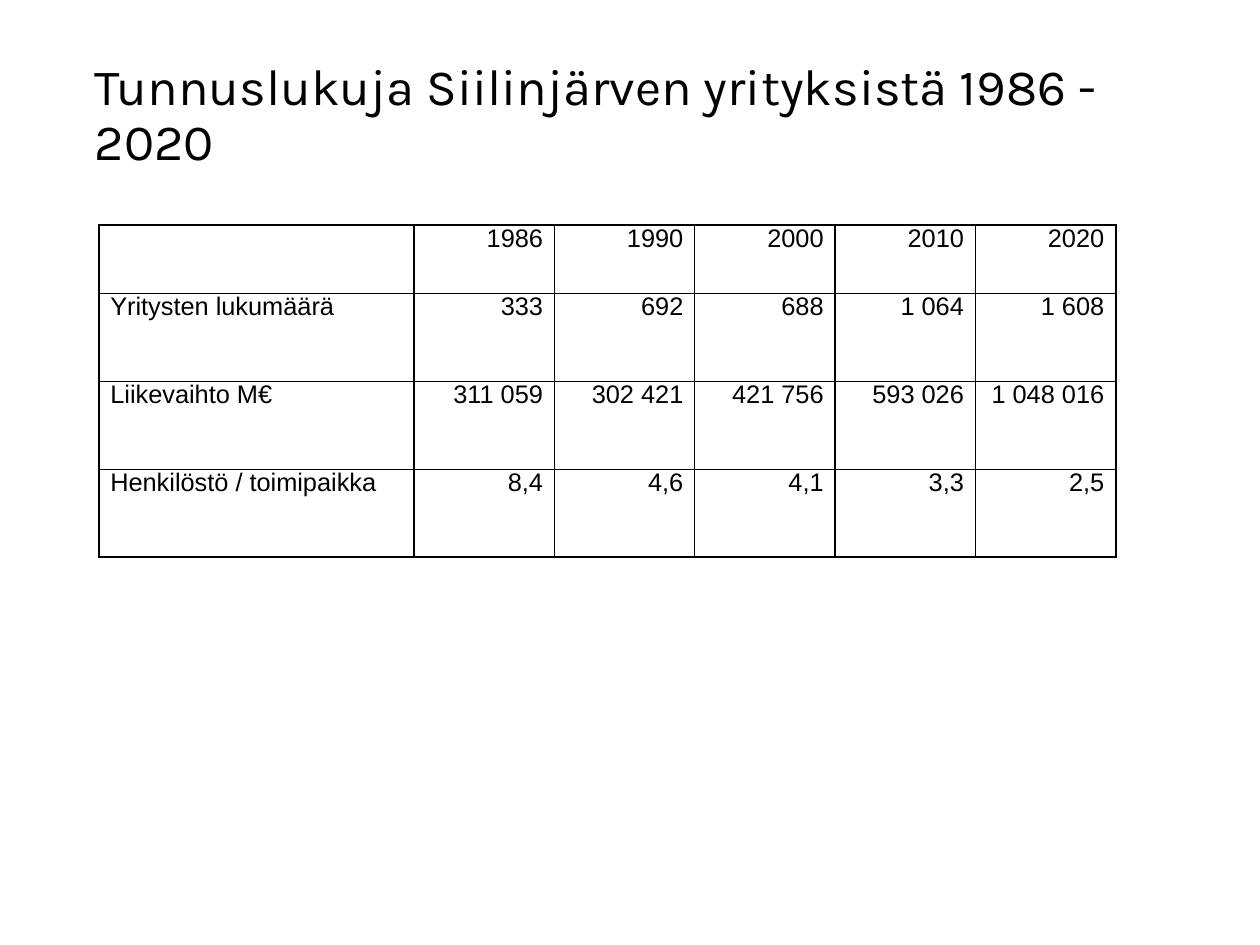
from pptx import Presentation
from pptx.dml.color import RGBColor
from pptx.enum.text import MSO_ANCHOR as Anchor, PP_ALIGN as Align
from pptx.oxml import parse_xml
from pptx.oxml.ns import nsdecls
from pptx.util import Pt

BLACK = RGBColor(0, 0, 0)
THICK, THIN = Pt(1.25), Pt(0.5)
THICK_COLUMN_EDGES = (0, 1, 4, 6)
COLUMN_WIDTHS = [198.6] + [88.4] * 5
ROW_HEIGHTS = [43] + [55.5] * 3
KEY_FIGURES = [
    ("", "1986", "1990", "2000", "2010", "2020"),
    ("Yritysten lukumäärä", "333", "692", "688", "1 064", "1 608"),
    ("Liikevaihto M€", "311 059", "302 421", "421 756", "593 026", "1 048 016"),
    ("Henkilöstö / toimipaikka", "8,4", "4,6", "4,1", "3,3", "2,5"),
]


def style_paragraph(paragraph, font_name, size, line_spacing, align):
    """Set the font, line spacing and alignment of a paragraph."""
    paragraph.font.name = font_name
    paragraph.font.size = Pt(size)
    paragraph.font.bold = False
    paragraph.font.color.rgb = BLACK
    paragraph.line_spacing = line_spacing
    paragraph.alignment = align


def fill_title(title, wording):
    """Place and format the slide title."""
    title.left, title.top, title.width, title.height = Pt(52.6), Pt(24.5), Pt(650.2), Pt(99.4)
    frame = title.text_frame
    frame.text = wording
    frame.word_wrap = True
    frame.vertical_anchor = Anchor.MIDDLE
    frame.margin_left = frame.margin_right = Pt(7.2)
    frame.margin_top, frame.margin_bottom = Pt(2.2), Pt(3.6)
    style_paragraph(frame.paragraphs[0], "Karla", 32, 0.9, Align.LEFT)


def draw_borders(cell, row, column):
    """Give a cell its thick or thin border on each side."""
    edges = {
        "lnL": column in THICK_COLUMN_EDGES,
        "lnR": column + 1 in THICK_COLUMN_EDGES,
        "lnT": row == 0,
        "lnB": row + 1 == len(KEY_FIGURES),
    }
    properties = cell._tc.get_or_add_tcPr()
    for position, (side, is_thick) in enumerate(edges.items()):
        border = parse_xml(
            f'<a:{side} {nsdecls("a")} w="{THICK if is_thick else THIN}">'
            f'<a:solidFill><a:srgbClr val="{BLACK}"/></a:solidFill></a:{side}>'
        )
        properties.insert(position, border)


def fill_cell(cell, wording, is_label):
    """Write a label or figure into a plain cell."""
    cell.fill.background()
    cell.margin_left = cell.margin_right = Pt(7.2)
    cell.margin_top = cell.margin_bottom = Pt(3.7)
    cell.vertical_anchor = Anchor.TOP
    cell.text = wording
    align = Align.LEFT if is_label else Align.RIGHT
    style_paragraph(cell.text_frame.paragraphs[0], "Arial", 16, 0.74, align)


def add_key_figures(slide):
    """Add the table of company figures by year."""
    figures = slide.shapes.add_table(
        len(ROW_HEIGHTS), len(COLUMN_WIDTHS),
        Pt(62.3), Pt(141.6), Pt(sum(COLUMN_WIDTHS)), Pt(sum(ROW_HEIGHTS)),
    ).table
    figures.first_row = figures.horz_banding = False
    for column, width in zip(figures.columns, COLUMN_WIDTHS):
        column.width = Pt(width)
    for row, height in zip(figures.rows, ROW_HEIGHTS):
        row.height = Pt(height)
    for row, wordings in enumerate(KEY_FIGURES):
        for column, wording in enumerate(wordings):
            cell = figures.cell(row, column)
            fill_cell(cell, wording, is_label=column == 0)
            draw_borders(cell, row, column)


def main():
    """Build and save the key figures slide."""
    deck = Presentation()
    deck.slide_width, deck.slide_height = Pt(793.75), Pt(595.25)
    slide = deck.slides.add_slide(deck.slide_layouts[5])
    fill_title(slide.shapes.title, "Tunnuslukuja Siilinjärven yrityksistä 1986 - 2020")
    add_key_figures(slide)
    deck.save("out.pptx")


if __name__ == "__main__":
    main()
